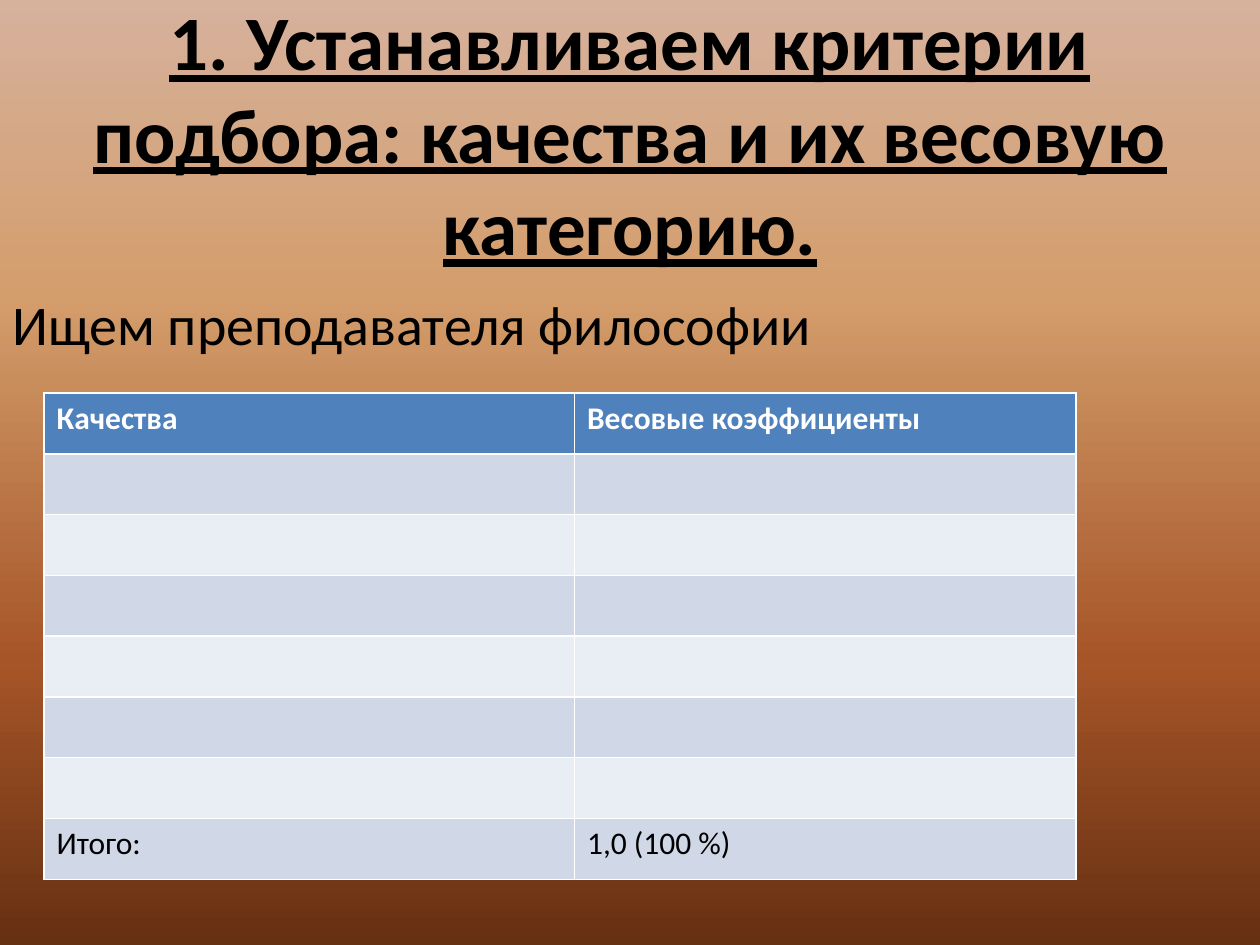
from lxml.etree import SubElement
from pptx import Presentation
from pptx.dml.color import RGBColor
from pptx.enum.text import MSO_ANCHOR, PP_ALIGN
from pptx.oxml.ns import qn
from pptx.util import Inches, Pt

BLACK = RGBColor(0, 0, 0)
WHITE = RGBColor(255, 255, 255)
BLUE = RGBColor(0x4F, 0x81, 0xBD)
BANDS = [RGBColor(0xD0, 0xD8, 0xE8), RGBColor(0xE9, 0xED, 0xF4)]
STOPS = [(0, "D6B19C"), (31, "D49E6C"), (70, "A65528"), (100, "663012")]

TITLE = "1. Устанавливаем критерии подбора: качества и их весовую категорию."
TASK = "Ищем преподавателя философии"
HEAD = ("Качества", "Весовые коэффициенты")
TOTAL = ("Итого:", "1,0 (100 %)")
ROWS = [HEAD] + [("", "")] * 6 + [TOTAL]
COLS = (4.21, 3.98)
ROW_H = 0.4825

TITLE_FONT = {"size": Pt(44), "bold": True, "underline": True}
TASK_FONT = {"size": Pt(32)}
HEAD_FONT = {"size": Pt(18), "bold": True}
BODY_FONT = {"size": Pt(18), "bold": False}


def style(font, look, color=BLACK):
    for key, value in {"name": "Calibri", **look}.items():
        setattr(font, key, value)
    font.color.rgb = color


def add_text(slide, box, text, look, anchor, align):
    frame = slide.shapes.add_textbox(*map(Inches, box)).text_frame
    frame.word_wrap = True
    frame.vertical_anchor = anchor
    para = frame.paragraphs[0]
    para.text = text
    para.alignment = align
    style(para.runs[0].font, look)
    return para


def paint_back(slide):
    fill = slide.background.fill
    fill.gradient()
    fill.gradient_angle = 270
    stops = next(slide.element.iter(qn("a:gsLst")))
    for old in list(stops):
        stops.remove(old)
    for pos, color in STOPS:
        stop = SubElement(stops, qn("a:gs"), pos=str(pos * 1000))
        SubElement(stop, qn("a:srgbClr"), val=color)


def add_grid(slide):
    size = (0.35, 3.12, sum(COLS), ROW_H * len(ROWS))
    table = slide.shapes.add_table(len(ROWS), len(COLS), *map(Inches, size)).table
    for col, width in zip(table.columns, COLS):
        col.width = Inches(width)
    for r, row in enumerate(ROWS):
        look, color, back = BODY_FONT, BLACK, BANDS[(r - 1) % 2]
        if r == 0:
            look, color, back = HEAD_FONT, WHITE, BLUE
        for c, text in enumerate(row):
            cell = table.cell(r, c)
            cell.fill.solid()
            cell.fill.fore_color.rgb = back
            if text:
                cell.text = text
                style(cell.text_frame.paragraphs[0].runs[0].font, look, color)


def main():
    deck = Presentation()
    deck.slide_width, deck.slide_height = Inches(10), Inches(7.5)
    slide = deck.slides.add_slide(deck.slide_layouts[6])
    paint_back(slide)
    add_text(slide, (0, 0, 10, 2.1), TITLE, TITLE_FONT,
             MSO_ANCHOR.MIDDLE, PP_ALIGN.CENTER)
    task = add_text(slide, (0, 2.25, 10, 5.25), TASK, TASK_FONT,
                    MSO_ANCHOR.TOP, PP_ALIGN.LEFT)
    task.space_before = Pt(6.4)
    add_grid(slide)
    deck.save("out.pptx")


if __name__ == "__main__":
    main()
